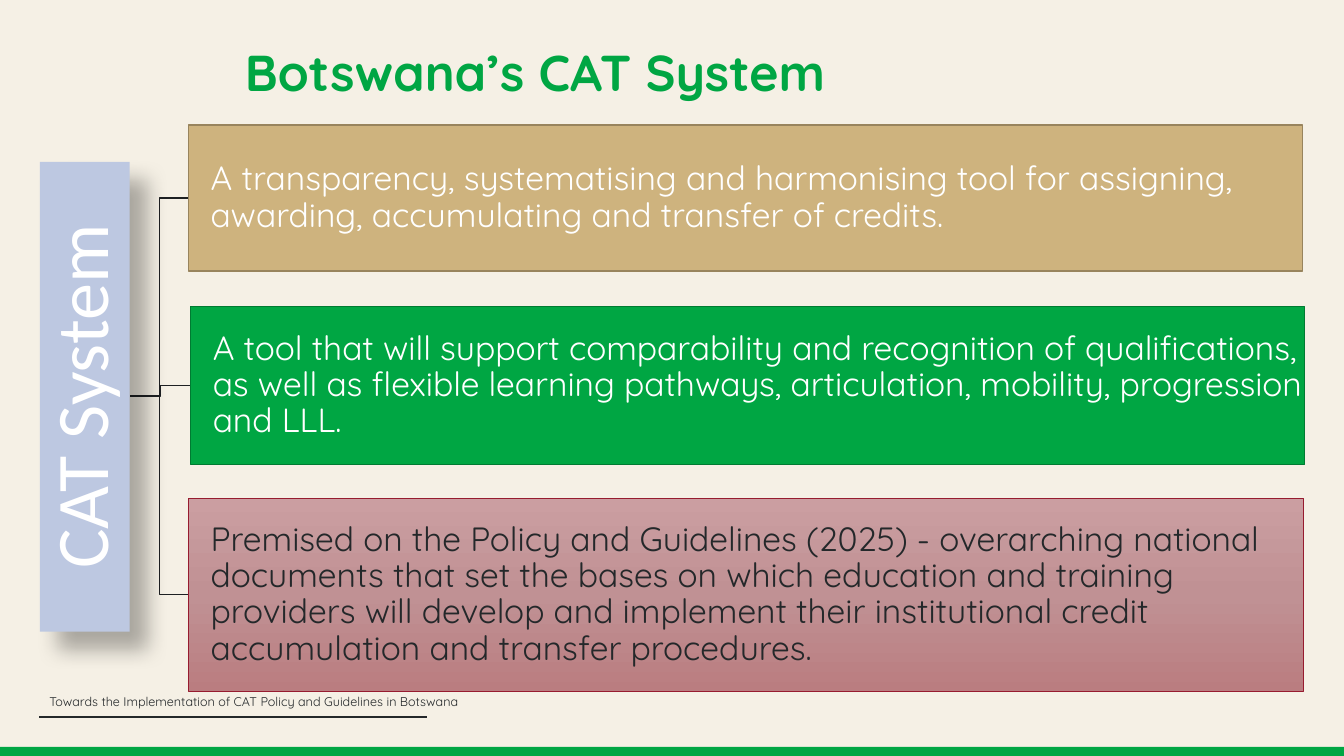
from copy import deepcopy
from dataclasses import dataclass

from lxml import etree
from pptx import Presentation
from pptx.dml.color import RGBColor
from pptx.enum.shapes import MSO_CONNECTOR as Connector, MSO_SHAPE as Shape
from pptx.enum.text import MSO_ANCHOR as Anchor, PP_ALIGN as Align
from pptx.oxml.ns import qn
from pptx.util import Inches, Pt


@dataclass(frozen=True)
class Theme:
    paper: str = "F5F0E5"
    green: str = "00A643"
    green_edge: str = "007B32"
    sand: str = "CEB37E"
    sand_edge: str = "98845D"
    rose: tuple = ("CB9EA1", "C09194", "BA7D80")
    rose_edge: str = "971B2F"
    blue: str = "BDC8E1"
    ink: str = "24282A"
    branch: str = "1D2022"
    white: str = "FFFFFF"
    font: str = "Quicksand"
    label_font: str = "Calibri"
    title_size: int = 36
    label_size: int = 53
    body_size: int = 24
    footer_size: int = 9


THEME = Theme()
TRUNK = (1.29, 3.93)  # where the branches leave the label

# left, top, width, height, fill, edge, edge width, text colour, text
PANELS = [
    (1.87, 1.24, 11.05, 1.45, THEME.sand, THEME.sand_edge, 1, THEME.white,
     "A transparency, systematising and harmonising tool for assigning, "
     "awarding, accumulating and transfer of credits."),
    (1.89, 3.04, 11.05, 1.57, THEME.green, THEME.green_edge, 1, THEME.white,
     "A tool that will support comparability and recognition of qualifications, "
     "as well as flexible learning pathways, articulation, mobility, "
     "progression and LLL."),
    (1.87, 4.94, 11.06, 1.92, THEME.rose, THEME.rose_edge, 0.5, THEME.ink,
     "Premised on the Policy and Guidelines (2025) - overarching national "
     "documents that set the bases on which education and training providers "
     "will develop and implement their institutional credit accumulation and "
     "transfer procedures."),
]


def rgb(value):
    return RGBColor.from_string(value)


def write(box, text, size, color, font=THEME.font, bold=False, inset=None,
          anchor=Anchor.MIDDLE, align=Align.LEFT, spacing=0.9):
    frame = box.text_frame
    frame.word_wrap = True
    frame.vertical_anchor = anchor
    if inset is not None:
        frame.margin_left = frame.margin_right = Inches(inset)
        frame.margin_top = frame.margin_bottom = Inches(inset)
    frame.text = text
    para = frame.paragraphs[0]
    para.alignment = align
    para.line_spacing = spacing
    span = para.runs[0]
    span.font.name = font
    span.font.size = Pt(size)
    span.font.bold = bold
    span.font.color.rgb = rgb(color)
    return para


def add_text(page, area, *args, **options):
    box = page.shapes.add_textbox(*map(Inches, area))
    write(box, *args, **options)


def fill_gradient(box, colors):
    """Fill from top to bottom with three evenly spaced colours."""
    box.fill.gradient()
    box.fill.gradient_angle = 270
    first = box.fill.gradient_stops[0]._gs
    first.addnext(deepcopy(first))
    for index, (stop, color) in enumerate(zip(box.fill.gradient_stops, colors)):
        stop.position = index / (len(colors) - 1)
        stop.color.rgb = rgb(color)


def add_block(page, area, fill, edge=None, edge_width=1):
    box = page.shapes.add_shape(Shape.RECTANGLE, *map(Inches, area))
    box.shadow.inherit = False
    if isinstance(fill, tuple):
        fill_gradient(box, fill)
    else:
        box.fill.solid()
        box.fill.fore_color.rgb = rgb(fill)
    if edge:
        box.line.color.rgb = rgb(edge)
        box.line.width = Pt(edge_width)
    else:
        box.line.fill.background()
    return box


def add_panel(page, left, top, width, height, fill, edge, edge_width, color, text):
    box = add_block(page, (left, top, width, height), fill, edge, edge_width)
    para = write(box, text, THEME.body_size, color, inset=0.02)
    indent = para._p.get_or_add_pPr()
    indent.set("marL", str(Inches(0.2)))
    indent.set("indent", "0")


def add_branch(page, left, middle):
    """Draw a stepped line from the label to a panel's left side."""
    start_x, start_y = TRUNK
    bend = (start_x + left) / 2
    points = [(bend, start_y), (bend, middle), (left, middle)]
    builder = page.shapes.build_freeform(Inches(start_x), Inches(start_y))
    builder.add_line_segments([(Inches(x), Inches(y)) for x, y in points], close=False)
    branch = builder.convert_to_shape()
    branch.shadow.inherit = False
    branch.fill.background()
    branch.line.color.rgb = rgb(THEME.branch)
    branch.line.width = Pt(1)


def add_shadow(box):
    effects = box._element.spPr.find(qn("a:effectLst"))
    shadow = etree.SubElement(effects, qn("a:outerShdw"), blurRad=str(Pt(15)),
                              dist=str(Pt(18)), dir=str(45 * 60000),
                              algn="tl", rotWithShape="0")
    color = etree.SubElement(shadow, qn("a:srgbClr"), val="000000")
    etree.SubElement(color, qn("a:alpha"), val="30000")


def add_label(page):
    box = add_block(page, (-1.49, 3.49, 4.66, 0.89), THEME.blue)
    box.rotation = 270
    add_shadow(box)
    write(box, "CAT System", THEME.label_size, THEME.white, font=THEME.label_font,
          inset=0.04, align=Align.CENTER)


def add_rule(page, left, right, height):
    rule = page.shapes.add_connector(Connector.STRAIGHT, Inches(left), Inches(height),
                                     Inches(right), Inches(height))
    rule.line.color.rgb = rgb(THEME.ink)
    rule.line.width = Pt(1.5)
    etree.SubElement(rule._element.spPr, qn("a:effectLst"))


def main():
    deck = Presentation()
    deck.slide_width, deck.slide_height = Inches(13.33), Inches(7.5)
    page = deck.slides.add_slide(deck.slide_layouts[6])
    page.background.fill.solid()
    page.background.fill.fore_color.rgb = rgb(THEME.paper)

    # Page frame and title
    add_block(page, (-0.03, 7.41, 13.4, 0.13), THEME.green)
    add_rule(page, 0.39, 4.24, 7.11)
    add_text(page, (2.33, 0.35, 9.87, 0.72), "Botswana’s CAT System",
             THEME.title_size, THEME.green, bold=True, anchor=Anchor.BOTTOM)

    # Branches behind the label and the panels
    for left, top, _, height, *_ in PANELS:
        add_branch(page, left, top + height / 2)
    add_label(page)
    for panel in PANELS:
        add_panel(page, *panel)

    # Footer
    add_text(page, (0.39, 6.86, 4.38, 0.19),
             "Towards the Implementation of CAT Policy and Guidelines in Botswana",
             THEME.footer_size, THEME.ink, spacing=1.0)

    deck.save("out.pptx")


if __name__ == "__main__":
    main()
